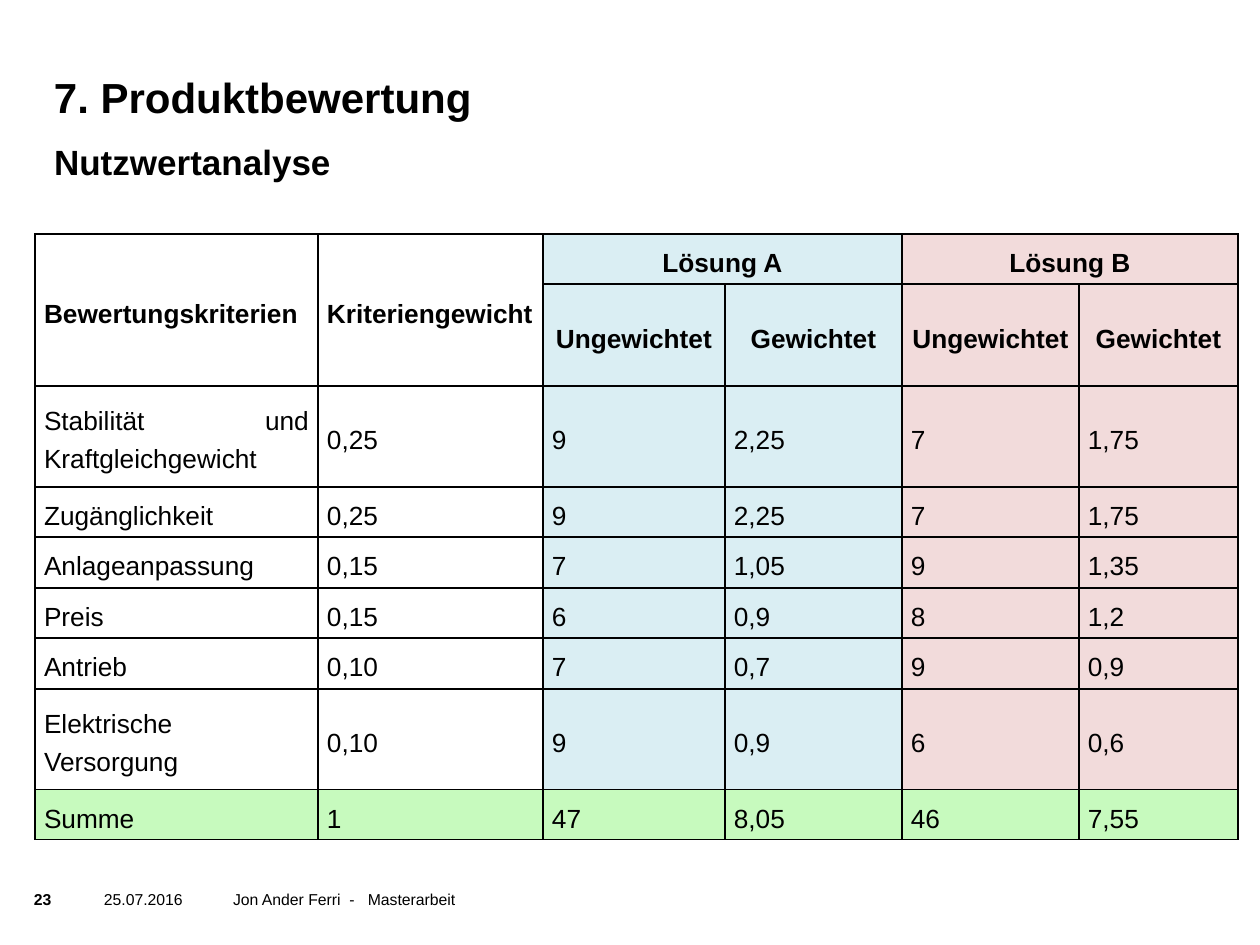
from itertools import product
from lxml.etree import SubElement
from pptx import Presentation
from pptx.dml.color import RGBColor
from pptx.enum.text import MSO_ANCHOR as Anchor, PP_ALIGN as Align
from pptx.oxml.ns import qn
from pptx.util import Pt

PX = 914400 // 126
BLACK = RGBColor(0x00, 0x00, 0x00)
WHITE = RGBColor(0xFF, 0xFF, 0xFF)
BLUE = RGBColor(0xDA, 0xEE, 0xF3)
ROSE = RGBColor(0xF2, 0xDB, 0xDB)
GREEN = RGBColor(0xC7, 0xFA, 0xBE)

TEXTS = [
    ("23", (34, 890, 45, 30), 9, True, Anchor.TOP, 0),
    ("25.07.2016", (104, 890, 112, 30), 9, False, Anchor.TOP, 0),
    ("7. Produktbewertung", (54, 45, 971, 77), 24, True, Anchor.BOTTOM, 0),
    ("Nutzwertanalyse", (54, 123, 1130, 708), 20, True, Anchor.TOP, 18),
    ("Jon Ander Ferri  -   Masterarbeit", (233, 890, 576, 49), 9, False, Anchor.TOP, 0),
]

ROWS = [
    ("Bewertungskriterien", "Kriteriengewicht", "Lösung A", "", "Lösung B", ""),
    ("", "", "Ungewichtet", "Gewichtet", "Ungewichtet", "Gewichtet"),
    ("Stabilität und Kraftgleichgewicht", "0,25", "9", "2,25", "7", "1,75"),
    ("Zugänglichkeit", "0,25", "9", "2,25", "7", "1,75"),
    ("Anlageanpassung", "0,15", "7", "1,05", "9", "1,35"),
    ("Preis", "0,15", "6", "0,9", "8", "1,2"),
    ("Antrieb", "0,10", "7", "0,7", "9", "0,9"),
    ("Elektrische Versorgung", "0,10", "9", "0,9", "6", "0,6"),
    ("Summe", "1", "47", "8,05", "46", "7,55"),
]
HEADER_ROWS = 2
TABLE_LEFT, TABLE_TOP = 35, 234
COLUMN_WIDTHS = [283, 225, 182, 177, 177, 159]
ROW_HEIGHTS = [50, 102, 101, 50, 51, 50, 51, 101, 50]
COLUMN_FILLS = [WHITE, WHITE, BLUE, BLUE, ROSE, ROSE]
MERGES = [((0, 0), (1, 0)), ((0, 1), (1, 1)), ((0, 2), (0, 3)), ((0, 4), (0, 5))]

CELL_FORMAT = {
    "vertical_anchor": Anchor.MIDDLE,
    "margin_left": 9 * PX, "margin_right": 9 * PX, "margin_top": 0, "margin_bottom": 0,
}
PARAGRAPH_FORMAT = {"line_spacing": 1.3, "space_after": Pt(6)}


def apply(target, values):
    for key, value in values.items():
        setattr(target, key, value)


def write(paragraph, text, size, bold):
    run = paragraph.add_run()
    run.text = text
    apply(run.font, {"name": "Arial", "size": Pt(size), "bold": bold})
    run.font.color.rgb = BLACK


def add_text(slide, text, box, size, bold, anchor, inset_top):
    frame = slide.shapes.add_textbox(*(n * PX for n in box)).text_frame
    apply(frame, {
        "word_wrap": True, "vertical_anchor": anchor, "margin_left": 0,
        "margin_right": 0, "margin_top": inset_top * PX, "margin_bottom": 0,
    })
    write(frame.paragraphs[0], text, size, bold)


def add_borders(cell):
    properties = cell._tc.get_or_add_tcPr()
    for index, side in enumerate(("a:lnL", "a:lnR", "a:lnT", "a:lnB")):
        border = SubElement(properties, qn(side), w=str(Pt(1)))
        fill = SubElement(border, qn("a:solidFill"))
        SubElement(fill, qn("a:srgbClr"), val=str(BLACK))
        properties.insert(index, border)


def add_rating_table(slide):
    frame = slide.shapes.add_table(
        len(ROWS), len(COLUMN_WIDTHS), TABLE_LEFT * PX, TABLE_TOP * PX,
        sum(COLUMN_WIDTHS) * PX, sum(ROW_HEIGHTS) * PX)
    table = frame.table
    apply(table, {"first_row": False, "horz_banding": False})
    for column, width in zip(table.columns, COLUMN_WIDTHS):
        column.width = width * PX
    for row, height in zip(table.rows, ROW_HEIGHTS):
        row.height = height * PX
    for start, end in MERGES:
        table.cell(*start).merge(table.cell(*end))

    for r, c in product(range(len(ROWS)), range(len(COLUMN_WIDTHS))):
        cell = table.cell(r, c)
        apply(cell, CELL_FORMAT)
        cell.fill.solid()
        cell.fill.fore_color.rgb = GREEN if r == len(ROWS) - 1 else COLUMN_FILLS[c]
        add_borders(cell)
        if ROWS[r][c]:
            is_header = r < HEADER_ROWS
            paragraph = cell.text_frame.paragraphs[0]
            apply(paragraph, PARAGRAPH_FORMAT)
            paragraph.alignment = Align.CENTER if is_header and c > 1 else Align.JUSTIFY
            write(paragraph, ROWS[r][c], 15, is_header)


def main():
    deck = Presentation()
    apply(deck, {"slide_width": 1260 * PX, "slide_height": 945 * PX})
    slide = deck.slides.add_slide(deck.slide_layouts[6])
    for entry in TEXTS:
        add_text(slide, *entry)
    add_rating_table(slide)
    deck.save("out.pptx")


if __name__ == "__main__":
    main()
